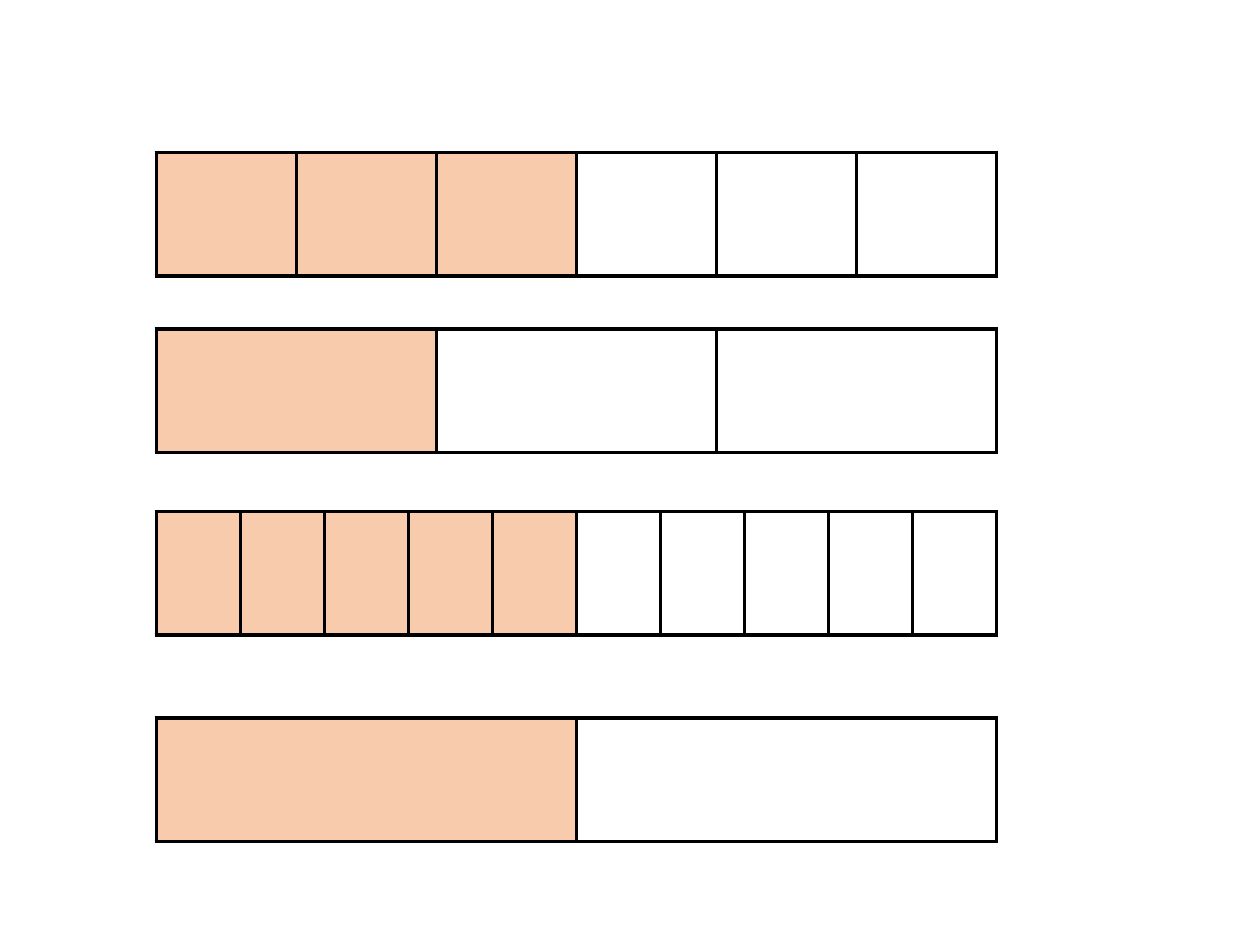
from dataclasses import dataclass

from lxml.etree import SubElement as Sub
from pptx import Presentation as Deck
from pptx.dml.color import RGBColor as Color
from pptx.oxml.ns import qn
from pptx.util import Inches, Pt


@dataclass(frozen=True)
class Theme:
    shade: str = "F8CBAD"
    blank: str = "FFFFFF"
    line: str = "000000"
    width: float = 2.25
    font: str = "Calibri"
    size: int = 18


THEME = Theme()
LEFT, WIDTH, HEIGHT = 1.24, 6.67, 0.98

# Top of each row of bars
SIXTHS, THIRDS, TENTHS, HALVES = 1.21, 2.61, 4.06, 5.7

# Top, number of parts and fills of the first parts, from back to front:
# each row has a plain bar with a shaded bar over it
BARS = [
    (THIRDS, 3, []),
    (SIXTHS, 6, []),
    (HALVES, 1, [THEME.blank]),
    (HALVES, 2, [THEME.shade]),
    (TENTHS, 10, []),
    (TENTHS, 10, [THEME.shade] * 5),
    (SIXTHS, 6, [THEME.shade] * 3),
    (THIRDS, 3, [THEME.shade]),
]


def add_edges(cell):
    """Draw a solid line on all four sides of a cell."""
    props = cell._tc.get_or_add_tcPr()
    for side in ("lnL", "lnR", "lnT", "lnB"):
        edge = Sub(props, qn(f"a:{side}"), w=str(Pt(THEME.width)))
        fill = Sub(edge, qn("a:solidFill"))
        Sub(fill, qn("a:srgbClr"), val=THEME.line)


def add_bar(slide, box, parts, fills):
    """Fill the box with a bar of equal parts, the first ones coloured."""
    left, top, width, height = (Inches(side) for side in box)
    table = slide.shapes.add_table(1, parts, left, top, width, height).table
    table.first_row = table.horz_banding = False
    for col in table.columns:
        col.width = round(width / parts)

    for index, cell in enumerate(table.rows[0].cells):
        add_edges(cell)
        if index < len(fills):
            cell.fill.solid()
            cell.fill.fore_color.rgb = Color.from_string(fills[index])
        else:
            cell.fill.background()
        font = cell.text_frame.paragraphs[0].font
        font.name, font.size = THEME.font, Pt(THEME.size)


def main():
    deck = Deck()
    deck.slide_width, deck.slide_height = Inches(10), Inches(7.5)
    slide = deck.slides.add_slide(deck.slide_layouts[6])

    # Fraction bars
    for top, parts, fills in BARS:
        add_bar(slide, (LEFT, top, WIDTH, HEIGHT), parts, fills)
    deck.save("out.pptx")


if __name__ == "__main__":
    main()
